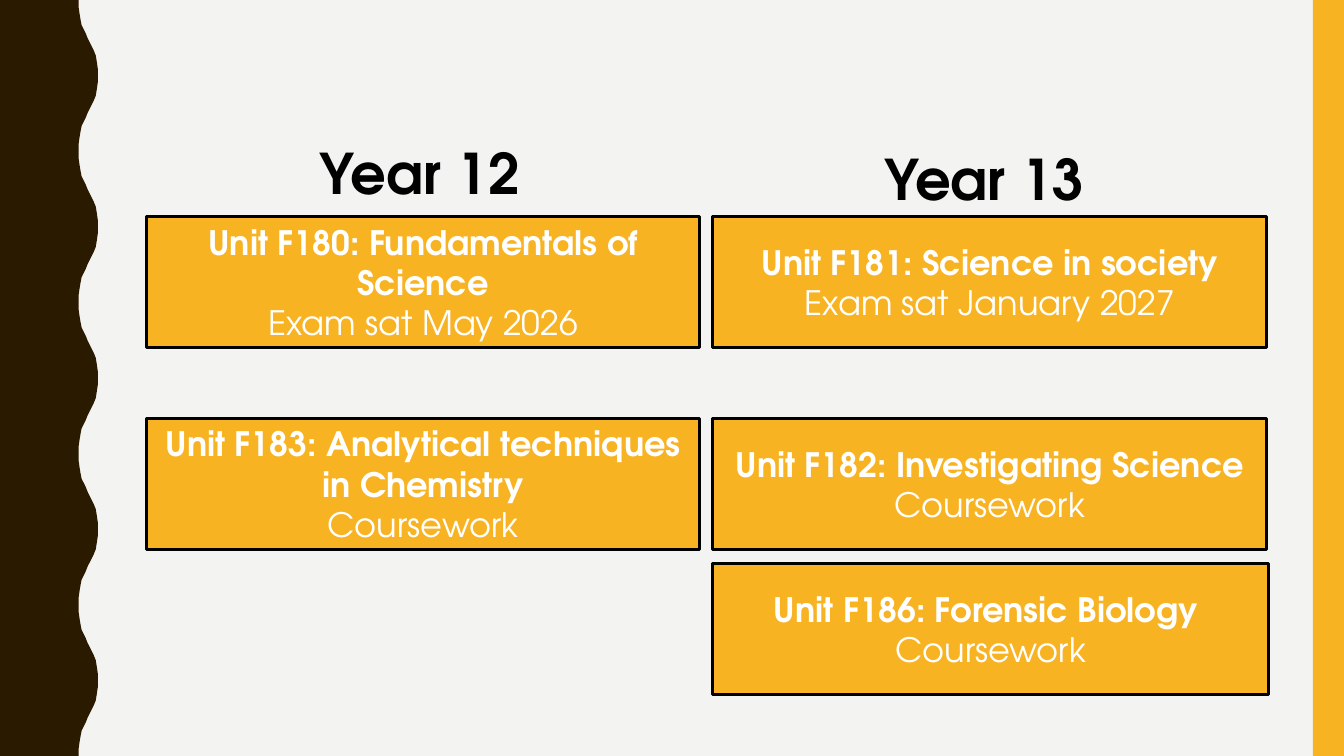
from pptx import Presentation
from pptx.dml.color import RGBColor
from pptx.enum.shapes import MSO_SHAPE as Shape
from pptx.enum.text import MSO_ANCHOR as Anchor, MSO_AUTO_SIZE as AutoSize, PP_ALIGN as Align
from pptx.util import Pt

PX = 9144
WIDTH, HEIGHT = 1333, 750
FONT = "TeX Gyre Adventor"
COLOURS = {"paper": "F3F3F2", "bark": "2A1A00", "amber": "F8B323",
           "ink": "000000", "white": "FFFFFF"}

WAVE_PERIOD = 150
WAVE_RISE = [(78, 0), (78, 7), (79, 14), (80, 20), (81, 25), (83, 29), (85, 33), (87, 38),
             (89, 42), (91, 46), (93, 50), (95, 55), (96, 61), (97, 68), (97, 75)]

COLUMNS = [145, 707]
ROWS = [215, 415, 559]
UNIT_WIDTH, UNIT_HEIGHT = 549, 130
UNITS = [
    (0, 0, "Unit F180: Fundamentals of Science", "Exam sat May 2026"),
    (1, 0, "Unit F181: Science in society", "Exam sat January 2027"),
    (0, 1, "Unit F183: Analytical techniques in Chemistry", "Coursework"),
    (1, 1, "Unit F182: Investigating Science", "Coursework"),
    (1, 2, "Unit F186: Forensic Biology ", "Coursework"),
]
YEARS = [("Year 12", 307, 133), ("Year 13", 867, 138)]


class SlideBuilder:
    def __init__(self, slide):
        self.slide = slide
        self.shapes = slide.shapes

    def colour(self, name):
        return RGBColor.from_string(COLOURS[name])

    def fill(self, target, name):
        target.fill.solid()
        target.fill.fore_color.rgb = self.colour(name)

    def background(self, name):
        self.fill(self.slide.background, name)

    def style_text(self, paragraph, size, colour, bold):
        for run in paragraph.runs:
            run.font.name = FONT
            run.font.size = Pt(size)
            run.font.bold = bold
            run.font.color.rgb = self.colour(colour)

    def wavy_edge(self):
        fall = [(x, WAVE_PERIOD - y) for x, y in WAVE_RISE[-2:0:-1]]
        outline = [(x, top + y) for top in range(0, HEIGHT, WAVE_PERIOD)
                   for x, y in WAVE_RISE + fall]
        outline += [(WAVE_RISE[0][0], HEIGHT), (0, HEIGHT)]
        builder = self.shapes.build_freeform(0, 0, scale=PX)
        builder.add_line_segments(outline, close=True)
        edge = builder.convert_to_shape()
        edge.shadow.inherit = False
        self.fill(edge, "bark")
        edge.line.fill.background()

    def rectangle(self, left, top, width, height, fill):
        box = self.shapes.add_shape(Shape.RECTANGLE, left * PX, top * PX, width * PX, height * PX)
        box.shadow.inherit = False
        self.fill(box, fill)
        box.line.fill.background()
        return box

    def unit(self, left, top, width, title, assessment):
        box = self.rectangle(left, top, width, UNIT_HEIGHT, "amber")
        box.line.color.rgb = self.colour("ink")
        box.line.width = Pt(2.25)
        frame = box.text_frame
        frame.word_wrap = True
        frame.vertical_anchor = Anchor.MIDDLE
        frame.text = f"{title}\n{assessment}"
        for paragraph, bold in zip(frame.paragraphs, (True, False)):
            paragraph.alignment = Align.CENTER
            self.style_text(paragraph, 24, "white", bold)

    def heading(self, text, left, top):
        frame = self.shapes.add_textbox(left * PX, top * PX, 269 * PX, 77 * PX).text_frame
        frame.word_wrap = True
        frame.auto_size = AutoSize.SHAPE_TO_FIT_TEXT
        frame.text = text
        self.style_text(frame.paragraphs[0], 40, "ink", True)


def main():
    deck = Presentation()
    deck.slide_width, deck.slide_height = WIDTH * PX, HEIGHT * PX
    page = SlideBuilder(deck.slides.add_slide(deck.slide_layouts[6]))
    page.background("paper")
    page.wavy_edge()
    page.rectangle(1302, 0, 31, HEIGHT, "amber")
    for column, row, title, assessment in UNITS:
        width = UNIT_WIDTH + 2 if row == 2 else UNIT_WIDTH
        page.unit(COLUMNS[column], ROWS[row], width, title, assessment)
    for text, left, top in YEARS:
        page.heading(text, left, top)
    deck.save("out.pptx")


if __name__ == "__main__":
    main()
